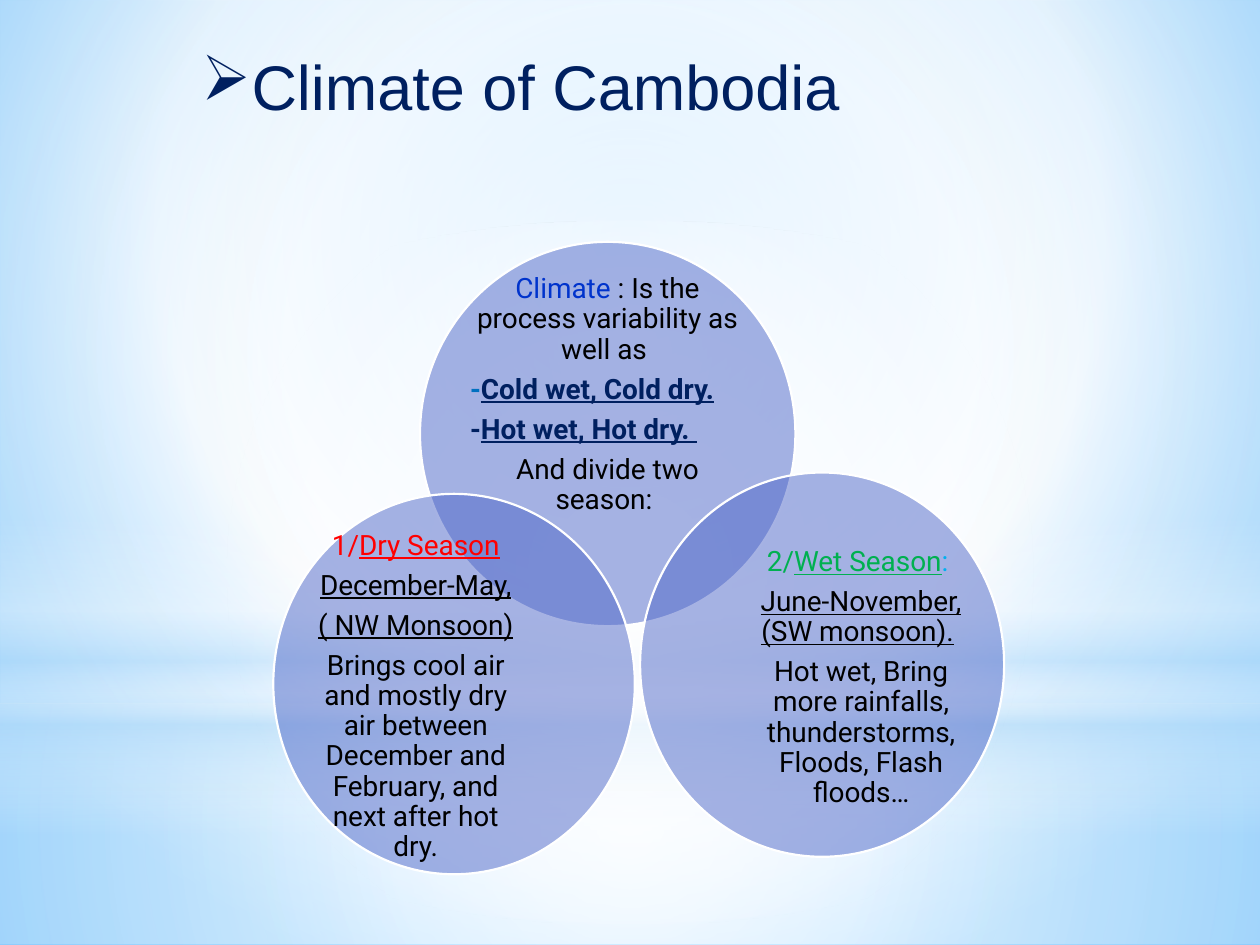
from lxml import etree
from pptx import Presentation
from pptx.dml.color import RGBColor
from pptx.enum.shapes import MSO_SHAPE
from pptx.enum.text import MSO_ANCHOR, MSO_AUTO_SIZE, PP_ALIGN
from pptx.oxml.ns import qn
from pptx.util import Pt

RECTANGLE, OVAL = MSO_SHAPE.RECTANGLE, MSO_SHAPE.OVAL
CENTER, JUSTIFY = PP_ALIGN.CENTER, PP_ALIGN.JUSTIFY
MIDDLE, GROW = MSO_ANCHOR.MIDDLE, MSO_AUTO_SIZE.SHAPE_TO_FIT_TEXT

WHITE = RGBColor(0xFF, 0xFF, 0xFF)
BLACK = RGBColor(0x00, 0x00, 0x00)
PALE = RGBColor(0xB4, 0xDC, 0xFA)
SKY = RGBColor(0x9E, 0xD5, 0xFF)
DEEP_SKY = RGBColor(0x5B, 0xB9, 0xFF)
INDIGO = RGBColor(0x4E, 0x67, 0xC8)
NAVY = RGBColor(0x00, 0x20, 0x60)
ROYAL = RGBColor(0x00, 0x33, 0xCC)
BLUE = RGBColor(0x00, 0x70, 0xC0)
CYAN = RGBColor(0x00, 0xB0, 0xF0)
GREEN = RGBColor(0x00, 0xB0, 0x50)
RED = RGBColor(0xFF, 0x00, 0x00)
CENTRE_FOCUS = (50, 50, 50, 50)


def set_alpha(color_element, percent):
    alpha = etree.SubElement(color_element, qn("a:alpha"))
    alpha.set("val", str(percent * 1000))


def gradient(stops, focus=None, angle=90):
    """Circular gradient around the focus, or linear without one."""
    fill = etree.Element(qn("a:gradFill"), rotWithShape="1")
    stop_list = etree.SubElement(fill, qn("a:gsLst"))
    for position, color, opacity in stops:
        stop = etree.SubElement(stop_list, qn("a:gs"), pos=str(position * 1000))
        set_alpha(etree.SubElement(stop, qn("a:srgbClr"), val=str(color)), opacity)
    if focus:
        kind = etree.SubElement(fill, qn("a:path"))
        kind.set("path", "circle")
        target = etree.SubElement(kind, qn("a:fillToRect"))
        for side, percent in zip("ltrb", focus):
            target.set(side, str(percent * 1000))
    else:
        etree.SubElement(fill, qn("a:lin"), ang=str(angle * 60000), scaled="0")
    return fill


def replace_solid(parent, new_fill):
    parent.replace(parent.find(qn("a:solidFill")), new_fill)


class SlideBuilder:
    body_font, body_size = "Roboto", Pt(16)
    title_font, title_size = "Arial", Pt(36)

    def __init__(self, slide):
        self.slide = slide

    def background(self, stops, focus):
        self.slide.background.fill.solid()
        properties = next(self.slide.element.iter(qn("p:bgPr")))
        replace_solid(properties, gradient(stops, focus))

    def shape(self, kind, box, color):
        shape = self.slide.shapes.add_shape(kind, *map(Pt, box))
        shape.shadow.inherit = False
        shape.fill.solid()
        shape.fill.fore_color.rgb = color
        shape.line.fill.background()
        return shape

    def glow(self, kind, box, stops, focus=None):
        shape = self.shape(kind, box, WHITE)
        replace_solid(shape.element.spPr, gradient(stops, focus))

    def circle(self, box):
        shape = self.shape(OVAL, box, INDIGO)
        set_alpha(shape.element.spPr.find(qn("a:solidFill"))[0], 50)
        shape.line.color.rgb = WHITE
        shape.line.width = Pt(1.25)

    def text_box(self, box):
        frame = self.slide.shapes.add_textbox(*map(Pt, box)).text_frame
        frame.word_wrap = True
        return frame

    def style(self, run, font, size, color, bold=False, underline=False):
        run.font.name, run.font.size = font, size
        run.font.color.rgb = color
        run.font.bold, run.font.underline = bold, underline

    def title(self, box, text, bullet):
        frame = self.text_box(box)
        frame.auto_size = GROW
        paragraph = frame.paragraphs[0]
        paragraph.text = text
        paragraph.font.size = self.title_size
        for run in paragraph.runs:
            self.style(run, self.title_font, self.title_size, NAVY)
        properties = paragraph._p.get_or_add_pPr()
        properties.set("marL", str(Pt(22.5)))
        properties.set("indent", str(Pt(-22.5)))
        mark = etree.Element(qn("a:buChar"), char=bullet)
        properties.insert(0, mark)

    def body(self, box, paragraphs):
        frame = self.text_box(box)
        frame.vertical_anchor = MIDDLE
        frame.margin_left = frame.margin_right = 0
        frame.margin_top = frame.margin_bottom = 0
        for index, (alignment, runs) in enumerate(paragraphs):
            paragraph = frame.add_paragraph() if index else frame.paragraphs[0]
            paragraph.alignment = alignment
            paragraph.line_spacing = 0.9
            paragraph.space_after = Pt(5.6)
            for text, *look in runs:
                run = paragraph.add_run()
                run.text = text
                self.style(run, self.body_font, self.body_size, *look)


def main():
    presentation = Presentation()
    presentation.slide_width, presentation.slide_height = Pt(720), Pt(540)
    slide = presentation.slides.add_slide(presentation.slide_layouts[6])
    builder = SlideBuilder(slide)

    # Backdrop: sky gradient, lower and upper haze, horizon band, glow
    builder.background(
        [(0, SKY, 100), (60, WHITE, 100), (100, DEEP_SKY, 100)], (20, 10, 20, 60))
    builder.glow(RECTANGLE, (0, 402, 720, 138),
                 [(0, WHITE, 91), (37, WHITE, 76), (100, PALE, 79)], CENTRE_FOCUS)
    builder.glow(RECTANGLE, (0, 0, 720, 402),
                 [(0, WHITE, 89), (48, WHITE, 62), (100, PALE, 79)], CENTRE_FOCUS)
    builder.glow(RECTANGLE, (0, 296.6, 720, 180),
                 [(0, WHITE, 0), (29, WHITE, 30), (45, PALE, 40),
                  (55, WHITE, 26), (65, PALE, 60), (100, WHITE, 0)])
    builder.glow(OVAL, (0, 126, 720, 402),
                 [(0, WHITE, 100), (56, WHITE, 0)], CENTRE_FOCUS)

    # Overlapping circles: circle box, text box, paragraphs of runs
    # (text, colour, bold, underline)
    topics = [
        ((240, 138.2, 214.5, 219.6), (268.6, 176.4, 157, 98.6), [
            (CENTER, [("Climate", ROYAL),
                      (" : Is the process variability as well as ", BLACK)]),
            (JUSTIFY, [("-", BLUE, True),
                       ("Cold wet, Cold dry.", NAVY, True, True)]),
            (JUSTIFY, [("-", NAVY, True),
                       ("Hot wet, Hot dry. ", NAVY, True, True)]),
            (CENTER, [("And divide two season: ", BLACK)]),
        ]),
        ((365.8, 270, 208, 219.6), (429.8, 326.9, 124.6, 121), [
            (CENTER, [("2/", GREEN), ("Wet Season", GREEN, False, True),
                      (": ", CYAN)]),
            (CENTER, [("June-November, (SW monsoon).", BLACK, False, True),
                      (" ", BLACK)]),
            (CENTER, [("Hot wet, Bring more rainfalls, thunderstorms, "
                       "Floods, Flash floods…", BLACK)]),
        ]),
        ((156.2, 282.2, 206.6, 217.4), (175.7, 338.4, 123.8, 119.5), [
            (CENTER, [("1/", RED), ("Dry Season", RED, False, True)]),
            (CENTER, [("December-May,", BLACK, False, True)]),
            (CENTER, [("( NW Monsoon)", BLACK, False, True)]),
            (CENTER, [("Brings cool air and mostly dry air between December "
                       "and February, and next after hot dry.", BLACK)]),
        ]),
    ]
    for circle_box, text_box, paragraphs in topics:
        builder.circle(circle_box)
        builder.body(text_box, paragraphs)

    # Title
    builder.title((108, 23.8, 478.8, 94.3), "Climate of Cambodia\v", "➢")

    presentation.save("out.pptx")


if __name__ == "__main__":
    main()
